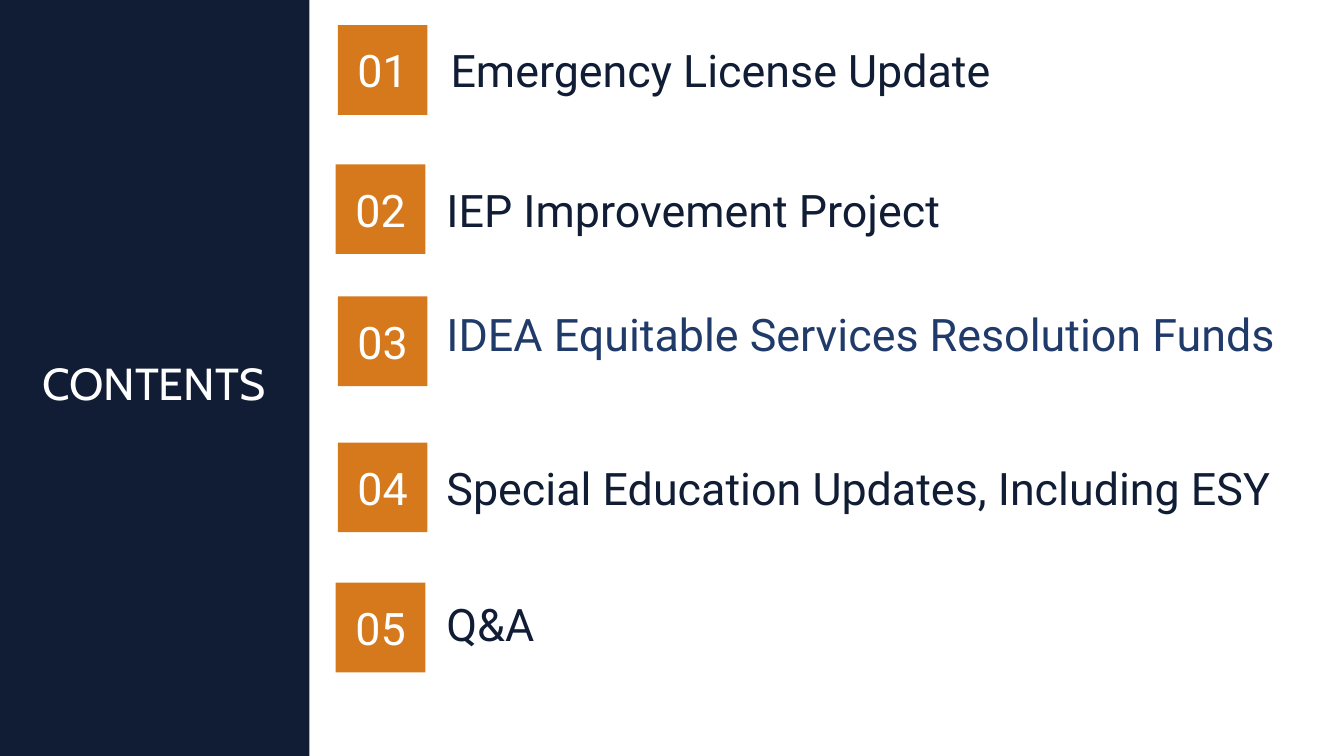
from pptx import Presentation
from pptx.dml.color import RGBColor
from pptx.enum.shapes import MSO_SHAPE as Shape
from pptx.enum.text import MSO_ANCHOR as Anchor, PP_ALIGN as Align
from pptx.util import Inches, Pt

COLORS = {"navy": "101D35", "orange": "D6791C", "blue": "203B6A", "white": "FFFFFF"}
BADGE_SIZE = 0.89

# Topic, text colour, badge (left, top), text box (left, top, width, height)
TOPICS = [
    ("Emergency License Update", "navy", (3.35, 0.25), (4.37, 0.25, 8.73, 0.89)),
    ("IEP Improvement Project", "navy", (3.33, 1.63), (4.33, 1.63, 8.73, 0.89)),
    ("IDEA Equitable Services Resolution Funds", "blue", (3.35, 2.94), (4.33, 2.89, 8.73, 0.83)),
    ("Special Education Updates, Including ESY", "navy", (3.35, 4.39), (4.33, 4.39, 8.64, 0.89)),
    ("Q&A", "navy", (3.33, 5.78), (4.33, 5.91, 8.64, 0.56)),
]


def color(name):
    return RGBColor.from_string(COLORS[name])


def set_text(shape, text, color_name, font_name="Roboto", **paragraph_format):
    frame = shape.text_frame
    frame.word_wrap = True
    frame.vertical_anchor = Anchor.MIDDLE
    paragraph = frame.paragraphs[0]
    paragraph.text = text
    for name, value in paragraph_format.items():
        setattr(paragraph, name, value)
    font = paragraph.runs[0].font
    for name, value in {"name": font_name, "size": Pt(32)}.items():
        setattr(font, name, value)
    font.color.rgb = color(color_name)


def add_block(slide, box, fill):
    block = slide.shapes.add_shape(Shape.RECTANGLE, *map(Inches, box))
    block.shadow.inherit = False
    block.fill.solid()
    block.fill.fore_color.rgb = color(fill)
    block.line.fill.background()
    return block


def add_label(slide, box, text, color_name, **text_format):
    label = slide.shapes.add_textbox(*map(Inches, box))
    set_text(label, text, color_name, **text_format)


def add_sidebar(slide, box):
    left, top, width, height = box
    add_block(slide, box, "navy")
    add_label(slide, (left + 0.32, top + 3.1, width - 0.31, height - 6.05), "CONTENTS",
              "white", font_name="Cabin", line_spacing=0.9)


def add_topic(slide, number, topic, color_name, badge_corner, text_box):
    badge = add_block(slide, (*badge_corner, BADGE_SIZE, BADGE_SIZE), "orange")
    set_text(badge, f"{number:02}", "white", alignment=Align.CENTER)
    add_label(slide, text_box, topic, color_name, alignment=Align.LEFT)


def main():
    presentation = Presentation()
    presentation.slide_width = Inches(13.33)
    presentation.slide_height = Inches(7.5)
    slide = presentation.slides.add_slide(presentation.slide_layouts[6])
    add_sidebar(slide, (0, 0, 3.07, 7.5))
    for number, topic in enumerate(TOPICS, start=1):
        add_topic(slide, number, *topic)
    presentation.save("out.pptx")


if __name__ == "__main__":
    main()
